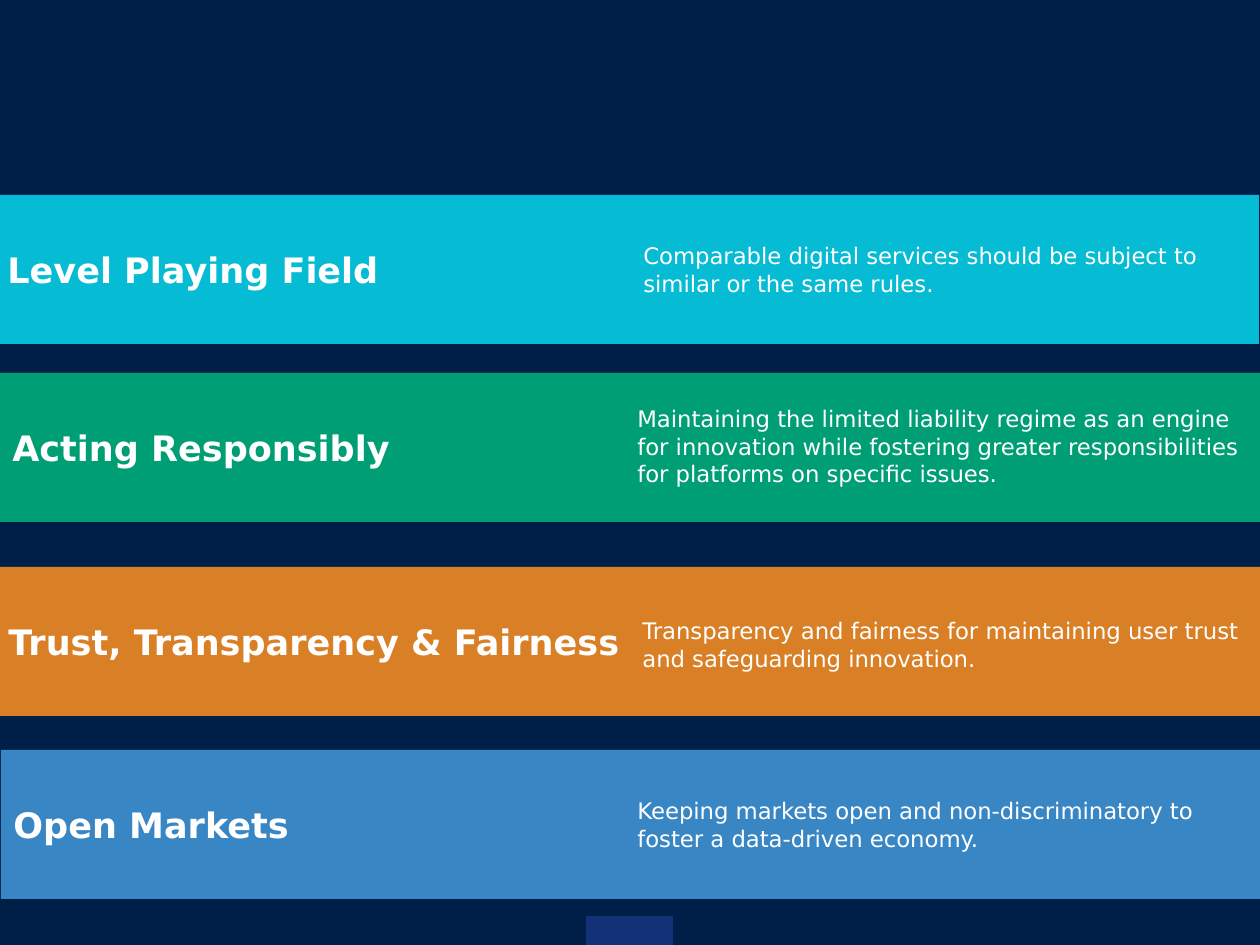
from pptx import Presentation
from pptx import util as u
from pptx.dml.color import RGBColor
from pptx.enum import shapes, text

PX = 914400 / 126  # EMU per px
W, H = 1260, 945
BAND_H = 149

NAVY = RGBColor(0x00, 0x1F, 0x48)
INDIGO = RGBColor(0x13, 0x31, 0x76)
CYAN = RGBColor(0x06, 0xBB, 0xD4)
GREEN = RGBColor(0x00, 0x9E, 0x75)
ORANGE = RGBColor(0xD9, 0x7F, 0x25)
BLUE = RGBColor(0x39, 0x86, 0xC5)
WHITE = RGBColor(0xFF, 0xFF, 0xFF)

TITLE = {"name": "DejaVu Sans", "size": u.Pt(20), "bold": True}
BODY = {"name": "DejaVu Sans", "size": u.Pt(13), "bold": False}

# Band box (x, y, w), colour, title, description box (dx, dy, w, h), description
PRINCIPLES = [
    ((-5, 195, 1264), CYAN, "Level Playing Field", (636, 41, 631, 68),
     "Comparable digital services should be subject to similar or the same rules."),
    ((0, 373, 1260), GREEN, "Acting Responsibly", (625, 26, 629, 96),
     "Maintaining the limited liability regime as an engine for innovation "
     "while fostering greater responsibilities for platforms on specific issues."),
    ((-4, 567, 1264), ORANGE, "Trust, Transparency & Fairness", (634, 44, 629, 68),
     "Transparency and fairness for maintaining user trust and safeguarding innovation."),
    ((1, 750, 1264), BLUE, "Open Markets", (624, 41, 631, 68),
     "Keeping markets open and non-discriminatory to\nfoster a data-driven economy."),
]


def emu(*lengths):
    return [u.Emu(round(n * PX)) for n in lengths]


def add_rect(s, box, color):
    sp = s.shapes.add_shape(shapes.MSO_SHAPE.RECTANGLE, *emu(*box))
    sp.shadow.inherit = False
    sp.fill.solid()
    sp.fill.fore_color.rgb = color
    sp.line.fill.background()
    return sp


def write(sp, words, style):
    tf = sp.text_frame
    tf.word_wrap = True
    tf.text = words
    for p in tf.paragraphs:
        p.alignment = text.PP_ALIGN.LEFT
        for r in p.runs:
            r.font.color.rgb = WHITE
            for key, value in style.items():
                setattr(r.font, key, value)
    return tf


def add_principle(s, box, color, title, body_box, body):
    x, y, w = box
    dx, dy, body_w, body_h = body_box

    # Coloured band with its title
    tf = write(add_rect(s, (x, y, w, BAND_H), color), title, TITLE)
    tf.vertical_anchor = text.MSO_ANCHOR.MIDDLE

    # Description on the right half
    sp = s.shapes.add_textbox(*emu(x + dx, y + dy, body_w, body_h))
    tf = write(sp, body, BODY)
    tf.auto_size = text.MSO_AUTO_SIZE.SHAPE_TO_FIT_TEXT


def add_footer_tab(s, box):
    sp = add_rect(s, box, INDIGO)
    sp.line.color.rgb = INDIGO
    sp.line.width = u.Pt(0.75)


def main():
    prs = Presentation()
    prs.slide_width, prs.slide_height = emu(W, H)
    s = prs.slides.add_slide(prs.slide_layouts[6])
    s.background.fill.solid()
    s.background.fill.fore_color.rgb = NAVY

    add_footer_tab(s, (587, 917, 85, 28))
    for principle in PRINCIPLES:
        add_principle(s, *principle)
    prs.save("out.pptx")


if __name__ == "__main__":
    main()
